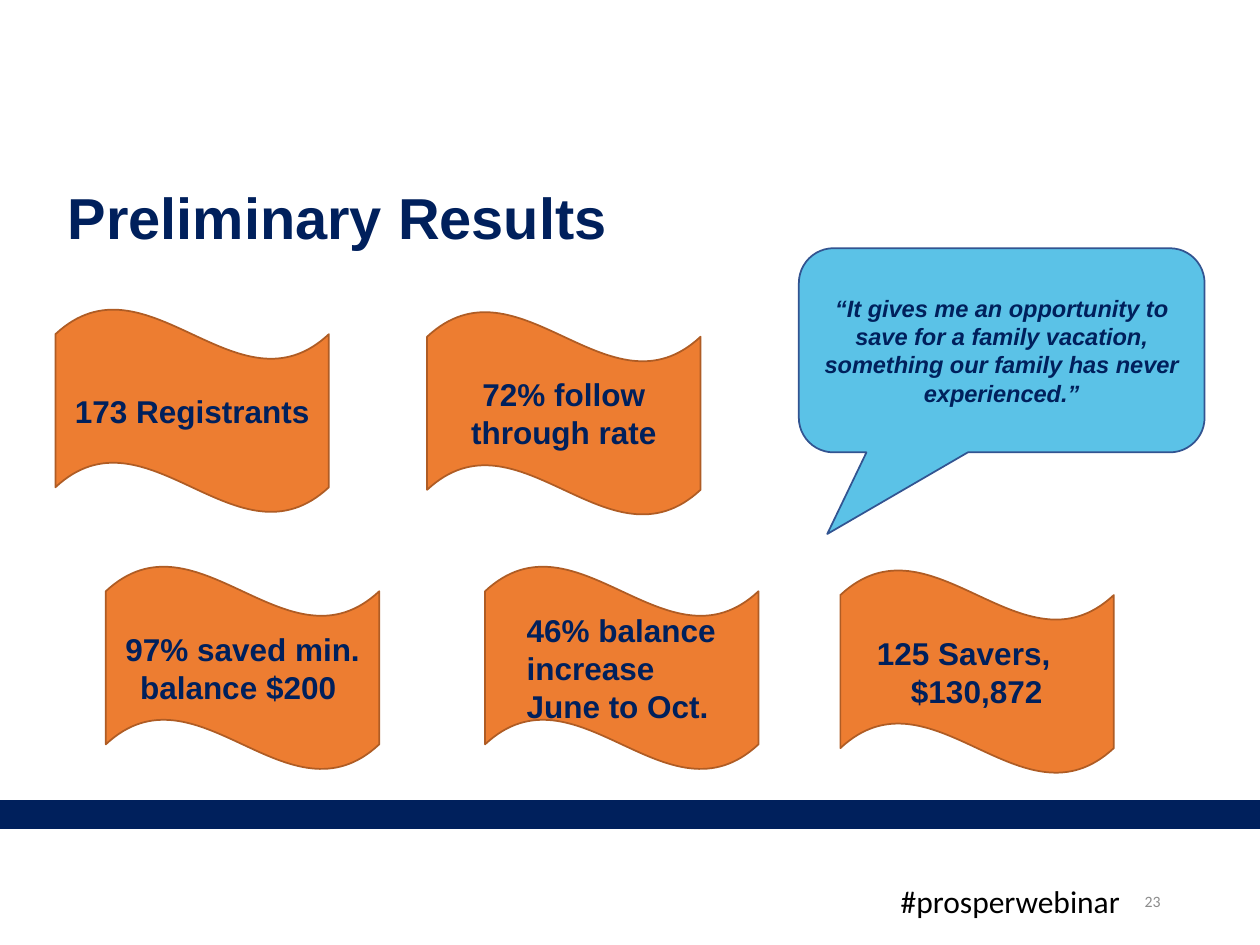
from dataclasses import dataclass

from pptx import Presentation
from pptx.dml.color import RGBColor
from pptx.enum.shapes import MSO_SHAPE
from pptx.enum.text import MSO_ANCHOR, PP_ALIGN
from pptx.util import Inches, Pt


@dataclass(frozen=True)
class Theme:
    navy: str = "00205C"
    orange: str = "ED7D31"
    rust: str = "AF5C24"
    sky: str = "5BC2E7"
    blue: str = "325491"
    black: str = "000000"
    gray: str = "8C8C8C"
    heading_font: str = "Arial"
    footer_font: str = "Calibri"
    title_size: float = 33
    body_size: float = 18
    quote_size: float = 13.5
    number_size: float = 9
    outline: float = 1


THEME = Theme()
WAVE_SIZE = (2.17, 1.62)


def apply_format(target, values):
    for name, value in values.items():
        setattr(target, name, value)


def font_format(size, bold=False, italic=False, name=THEME.heading_font):
    return {"name": name, "size": Pt(size), "bold": bold, "italic": italic}


def write_text(holder, lines, font, color=THEME.navy, align=PP_ALIGN.CENTER,
               anchor=MSO_ANCHOR.MIDDLE, margins=(0.1, 0.05), indents=()):
    frame = holder.text_frame
    side, edge = map(Inches, margins)
    apply_format(frame, {
        "word_wrap": True, "vertical_anchor": anchor,
        "margin_left": side, "margin_right": side,
        "margin_top": edge, "margin_bottom": edge,
    })
    for index, line in enumerate(lines):
        paragraph = frame.add_paragraph() if index else frame.paragraphs[0]
        paragraph.text = line
        paragraph.alignment = align
        if indents:
            properties = paragraph._p.get_or_add_pPr()
            properties.set("marL", str(Inches(indents[index])))
            properties.set("indent", "0")
        apply_format(paragraph.font, font)
        paragraph.font.color.rgb = RGBColor.from_string(color)
        for run in paragraph.runs:
            apply_format(run.font, font)
            run.font.color.rgb = RGBColor.from_string(color)


def add_panel(slide, preset, box, fill, outline=None):
    panel = slide.shapes.add_shape(preset, *map(Inches, box))
    panel.shadow.inherit = False
    panel.fill.solid()
    panel.fill.fore_color.rgb = RGBColor.from_string(fill)
    if outline:
        panel.line.color.rgb = RGBColor.from_string(outline)
        panel.line.width = Pt(THEME.outline)
    else:
        panel.line.fill.background()
    return panel


def add_result(slide, left, top, lines, indents=()):
    wave = add_panel(slide, MSO_SHAPE.WAVE, (left, top, *WAVE_SIZE),
                     THEME.orange, THEME.rust)
    align = PP_ALIGN.LEFT if indents else PP_ALIGN.CENTER
    write_text(wave, lines, font_format(THEME.body_size, bold=True),
               align=align, margins=(0.07, 0.04), indents=indents)


def add_quote(slide, box, quote):
    callout = add_panel(slide, MSO_SHAPE.ROUNDED_RECTANGULAR_CALLOUT, box,
                        THEME.sky, THEME.blue)
    for index, value in enumerate((-0.43, 0.9, 0.17)):
        callout.adjustments[index] = value
    write_text(callout, [quote],
               font_format(THEME.quote_size, bold=True, italic=True))


def add_label(slide, box, text, font, color, align=PP_ALIGN.LEFT,
              anchor=MSO_ANCHOR.TOP):
    label = slide.shapes.add_textbox(*map(Inches, box))
    write_text(label, [text], font, color, align, anchor)


def main():
    presentation = Presentation()
    apply_format(presentation, {"slide_width": Inches(10),
                                "slide_height": Inches(7.5)})
    slide = presentation.slides.add_slide(presentation.slide_layouts[6])

    add_panel(slide, MSO_SHAPE.RECTANGLE, (-0.06, 6.35, 10.11, 0.23), THEME.navy)
    add_label(slide, (0.44, 1.39, 5.11, 0.66), "Preliminary Results",
              font_format(THEME.title_size, bold=True), THEME.navy)

    results = (
        (0.44, 2.45, ["173 Registrants"]),
        (3.39, 2.47, ["72% follow through rate"]),
        (0.84, 4.49, ["97% saved min. balance $200 "]),
        (6.67, 4.52, ["125 Savers,", "$130,872"], (0.22, 0.49)),
        (3.85, 4.49, ["46% balance increase\vJune to Oct."], (0.26,)),
    )
    for result in results:
        add_result(slide, *result)

    add_quote(slide, (6.34, 1.97, 3.22, 1.62),
              "“It gives me an opportunity to save for a family vacation, "
              "something our family has never experienced.”")
    add_label(slide, (7.05, 6.95, 2.01, 0.4), "#prosperwebinar",
              font_format(THEME.body_size, name=THEME.footer_font), THEME.black)
    add_label(slide, (7.06, 6.95, 2.25, 0.4), "23",
              font_format(THEME.number_size, name=THEME.footer_font),
              THEME.gray, PP_ALIGN.RIGHT, MSO_ANCHOR.MIDDLE)

    presentation.save("out.pptx")


if __name__ == "__main__":
    main()
